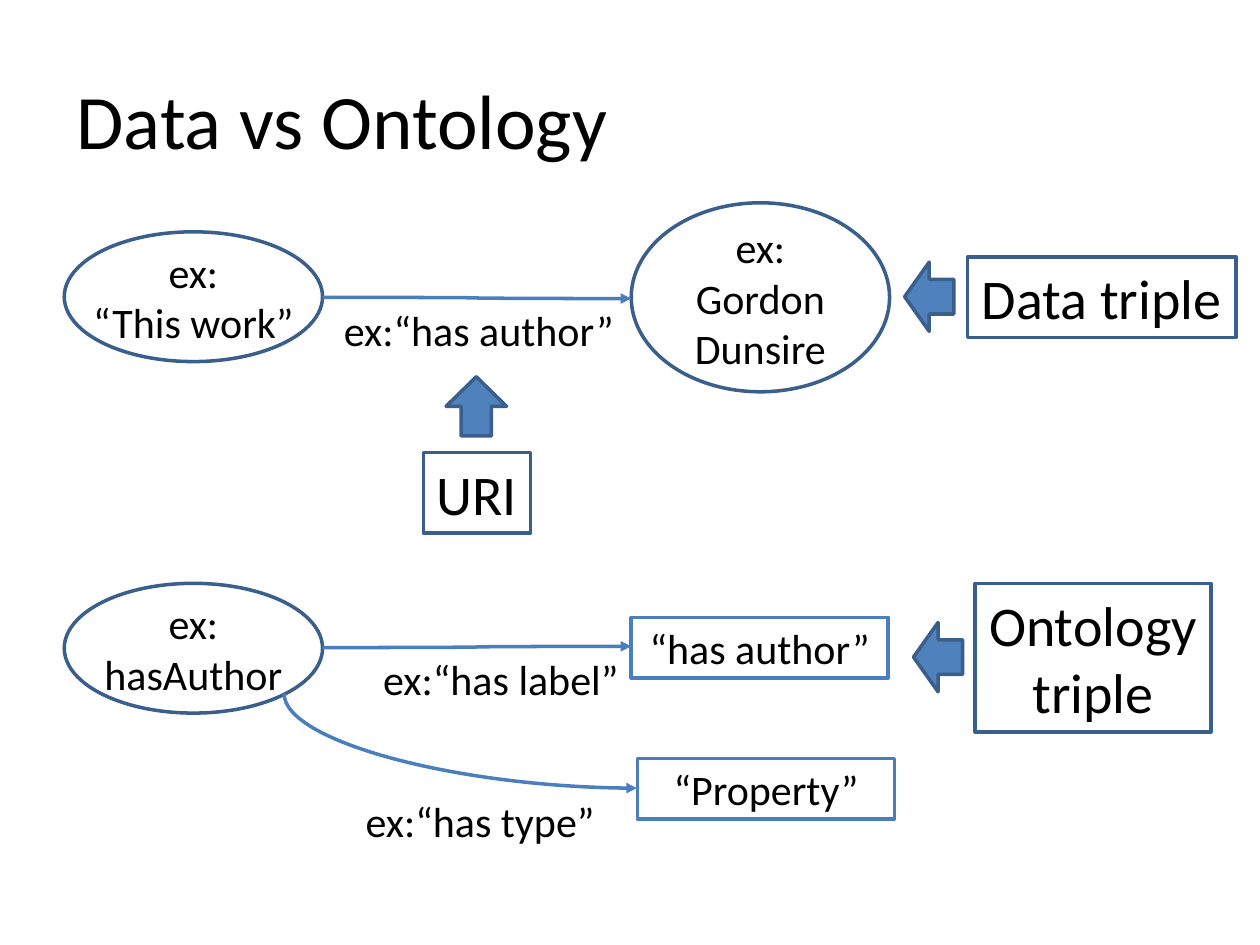
from pptx import Presentation
from pptx.dml.color import RGBColor
from pptx.enum.shapes import MSO_CONNECTOR, MSO_SHAPE
from pptx.enum.text import MSO_ANCHOR, MSO_AUTO_SIZE, PP_ALIGN
from pptx.oxml.ns import qn
from pptx.util import Inches, Pt
from lxml import etree

BLACK = RGBColor(0x00, 0x00, 0x00)
BLUE = RGBColor(0x4F, 0x81, 0xBD)
DARK_BLUE = RGBColor(0x3A, 0x5F, 0x8C)
LINK_BLUE = RGBColor(0x4B, 0x7E, 0xBC)

prs = Presentation()
prs.slide_width, prs.slide_height = Inches(10), Inches(7.5)
slide = prs.slides.add_slide(prs.slide_layouts[6])


def add_outline(preset, box, line_color, fill=None):
    shape = slide.shapes.add_shape(preset, *map(Inches, box))
    shape.shadow.inherit = False
    if fill is None:
        shape.fill.background()
    else:
        shape.fill.solid()
        shape.fill.fore_color.rgb = fill
    shape.line.color.rgb = line_color
    shape.line.width = Pt(2)
    return shape


def write(shape, lines, size, wrap=True, align=PP_ALIGN.CENTER):
    frame = shape.text_frame
    frame_format = {
        "word_wrap": wrap,
        "auto_size": MSO_AUTO_SIZE.SHAPE_TO_FIT_TEXT,
        "vertical_anchor": MSO_ANCHOR.MIDDLE,
    }
    if wrap:
        for side in ("left", "top", "right", "bottom"):
            frame_format["margin_" + side] = Inches(0.04)
    for name, value in frame_format.items():
        setattr(frame, name, value)
    for i, line in enumerate(lines):
        paragraph = frame.add_paragraph() if i else frame.paragraphs[0]
        paragraph.alignment = align
        run = paragraph.add_run()
        run.text = line
        run.font.name = "Calibri"
        run.font.size = Pt(size)
        run.font.color.rgb = BLACK


# Title
title = slide.shapes.add_textbox(Inches(0.51), Inches(0.52), Inches(4.46), Inches(0.84))
write(title, ["Data vs Ontology"], 44, wrap=False, align=PP_ALIGN.LEFT)

# Resources: ellipses with text inset from the outline
resources = [
    ((0.51, 1.84, 2.05, 1.03), 0.89, ["ex:", "“This work”"]),
    ((5.01, 1.61, 2.05, 1.5), 1.29, ["ex:", "Gordon Dunsire"]),
    ((0.51, 4.63, 2.05, 1.03), 0.89, ["ex:", "hasAuthor"]),
]
for box, text_height, lines in resources:
    add_outline(MSO_SHAPE.OVAL, box, DARK_BLUE)
    left, top, width, height = box
    text_box = (left + 0.14, top + (height - text_height) / 2, width - 0.28, text_height)
    write(slide.shapes.add_textbox(*map(Inches, text_box)), lines, 24)

# Literal values of the ontology triples
for left, top, value in [(5.01, 4.9, "“has author”"), (5.06, 6.02, "“Property”")]:
    literal = add_outline(MSO_SHAPE.RECTANGLE, (left, top, 2.04, 0.48), LINK_BLUE)
    write(literal, [value], 24)

# Predicates: curved arrows; the last one is a quarter curve turned by 270 degrees
predicates = [
    ((2.56, 2.36, 5.01, 2.37), "curvedConnector3", 0),
    ((2.56, 5.14, 5.01, 5.13), "curvedConnector3", 0),
    ((4.03, 4.48, 3.28, 7.28), "curvedConnector2", 270),
]
for ends, preset, rotation in predicates:
    arrow = slide.shapes.add_connector(MSO_CONNECTOR.CURVE, *map(Inches, ends))
    arrow.line.color.rgb = LINK_BLUE
    arrow.line.width = Pt(2)
    properties = arrow._element.spPr
    properties.find(qn("a:prstGeom")).set("prst", preset)
    if rotation:
        properties.find(qn("a:xfrm")).set("rot", str(rotation * 60000))
    etree.SubElement(properties.find(qn("a:ln")), qn("a:tailEnd"), type="triangle")
    etree.SubElement(properties, qn("a:effectLst"))

# Predicate names
predicate_names = [
    (2.54, 2.38, 2.52, "ex:“has author”"),
    (2.94, 5.15, 2.07, "ex:“has label”"),
    (2.55, 6.27, 2.52, "ex:“has type”"),
]
for left, top, width, name in predicate_names:
    label = slide.shapes.add_textbox(Inches(left), Inches(top), Inches(width), Inches(0.48))
    write(label, [name], 24)

# Callouts: framed text and the block arrow that points from it
callouts = [
    ((7.68, 2.04, 2.13, 0.64), ["Data triple"], MSO_SHAPE.LEFT_ARROW, (7.18, 2.08, 0.39, 0.55)),
    ((3.36, 3.59, 0.85, 0.64), ["URI"], MSO_SHAPE.UP_ARROW, (3.54, 2.99, 0.48, 0.47)),
    ((7.74, 4.63, 1.87, 1.18), ["Ontology", "triple"], MSO_SHAPE.LEFT_ARROW,
     (7.25, 4.94, 0.39, 0.55)),
]
for box, lines, pointer, pointer_box in callouts:
    write(add_outline(MSO_SHAPE.RECTANGLE, box, DARK_BLUE), lines, 32, wrap=False)
    add_outline(pointer, pointer_box, DARK_BLUE, BLUE)

prs.save("out.pptx")
